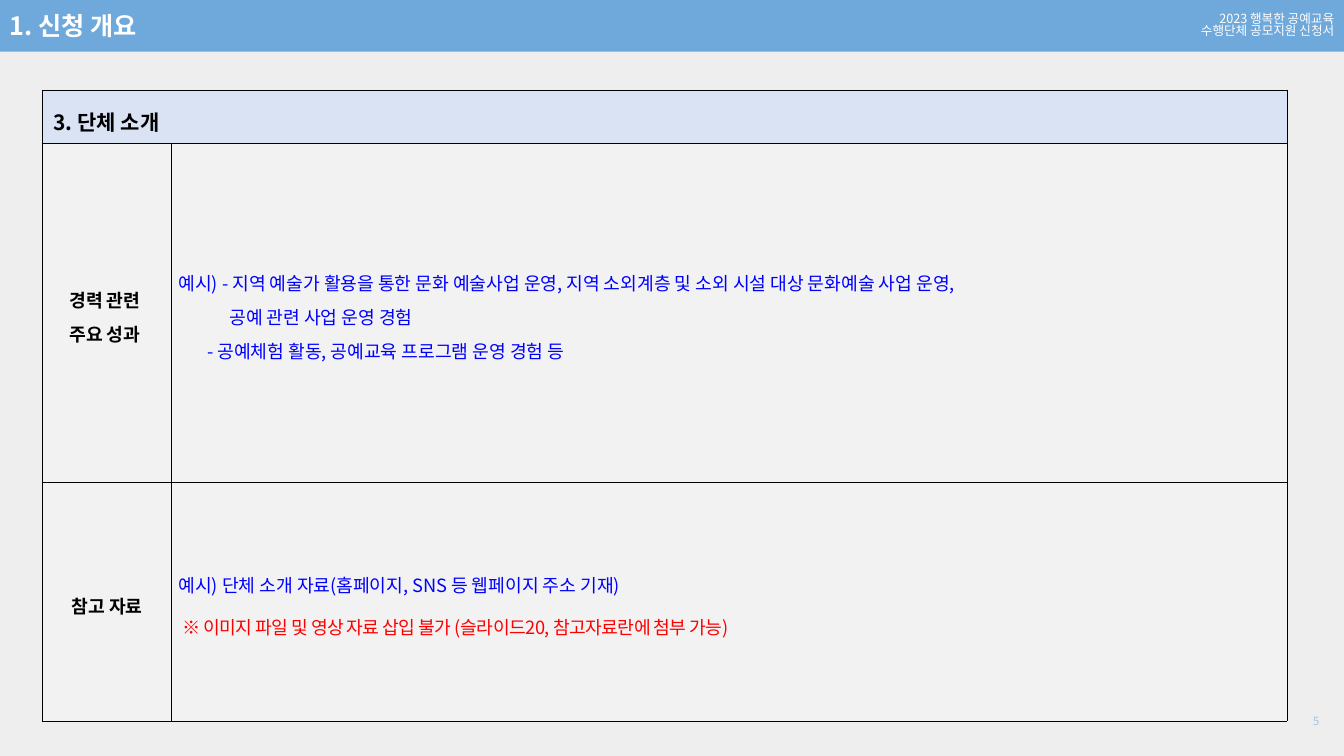
from lxml import etree
from pptx import Presentation
from pptx.dml.color import RGBColor
from pptx.enum.shapes import MSO_SHAPE as SHAPE
from pptx.enum.text import MSO_ANCHOR as ANCHOR, PP_ALIGN as ALIGN
from pptx.oxml.ns import qn
from pptx.util import Cm, Pt

FONT = "Noto Sans CJK KR"
COLORS = {
    "background": "EEEEEE", "bar": "6FA8DB", "heading": "DAE3F3",
    "cell": "F2F2F2", "black": "000000", "white": "FFFFFF",
    "example": "0000FF", "warning": "FF0000", "number": "9DC3E6",
}
COLUMN_WIDTHS = (3.25, 28.12)
ROW_HEIGHTS = (1.35, 8.53, 6.02)
LABEL = {"size": 13, "bold": True, "align": ALIGN.CENTER, "line_spacing": 1.3}
EXAMPLE = {"size": 13, "color": "example", "align": ALIGN.JUSTIFY,
           "line_spacing": 1.3, "hanging": 0.5, "indent": 0.5}
HEADING = {"size": 15, "bold": True, "align": ALIGN.JUSTIFY,
           "line_spacing": 1.3, "indent": 0.1}
WARNING = {**EXAMPLE, "color": "warning", "line_spacing": 1.6,
           "indent": 0.1, "hanging": 0, "tracking": -0.4}


def rgb(name):
    return RGBColor.from_string(COLORS[name])


def fill_solid(fill, color):
    fill.solid()
    fill.fore_color.rgb = rgb(color)


def add_run(p, text, size, color="black", bold=False, tracking=0):
    r = p.add_run()
    r.text = text
    for name, value in {"size": Pt(size), "bold": bold, "name": FONT}.items():
        setattr(r.font, name, value)
    r.font.color.rgb = rgb(color)
    rPr = r.font._element
    etree.SubElement(rPr, qn("a:ea")).set("typeface", FONT)
    if tracking:
        rPr.set("spc", str(round(tracking * 100)))


def write_lines(tf, lines):
    """Write (text, format) pairs as paragraphs; indents are in centimetres."""
    for i, (text, style) in enumerate(lines):
        style = dict(style)
        p = tf.paragraphs[0] if i == 0 else tf.add_paragraph()
        p.alignment = style.pop("align", ALIGN.LEFT)
        p.line_spacing = style.pop("line_spacing", 1.0)
        indent, hanging = style.pop("indent", 0), style.pop("hanging", 0)
        if indent:
            pPr = p._p.get_or_add_pPr()
            pPr.set("marL", str(Cm(indent)))
            pPr.set("indent", str(-Cm(hanging)))
        add_run(p, text, **style)


def add_text(s, left, top, width, height, text, style, wrap=True, anchor=ANCHOR.TOP):
    tf = s.shapes.add_textbox(Cm(left), Cm(top), Cm(width), Cm(height)).text_frame
    for name, value in {"word_wrap": wrap, "vertical_anchor": anchor}.items():
        setattr(tf, name, value)
    write_lines(tf, [(text, style)])


def add_header_bar(s, width, lines):
    sp = s.shapes.add_shape(SHAPE.RECTANGLE, 0, 0, width, Cm(1.3))
    sp.shadow.inherit = False
    fill_solid(sp.fill, "bar")
    sp.line.fill.background()
    sp.text_frame.vertical_anchor = ANCHOR.MIDDLE
    style = {"size": 9, "color": "white", "align": ALIGN.RIGHT, "line_spacing": 0.82}
    write_lines(sp.text_frame, [(line, style) for line in lines])


def add_borders(cell):
    tcPr = cell._tc.get_or_add_tcPr()
    for side in ("lnL", "lnR", "lnT", "lnB"):
        ln = etree.SubElement(tcPr, qn(f"a:{side}"), w=str(Pt(0.25)))
        solid = etree.SubElement(ln, qn("a:solidFill"))
        etree.SubElement(solid, qn("a:srgbClr"), val=COLORS["black"])


def fill_cell(cell, lines, color="cell"):
    layout = {"margin_left": Cm(0.18), "margin_right": Cm(0.18),
              "margin_top": Cm(0.05), "margin_bottom": Cm(0.05),
              "vertical_anchor": ANCHOR.MIDDLE}
    for name, value in layout.items():
        setattr(cell, name, value)
    fill_solid(cell.fill, color)
    write_lines(cell.text_frame, lines)


def add_intro_table(s, heading, rows):
    table = s.shapes.add_table(
        len(ROW_HEIGHTS), len(COLUMN_WIDTHS), Cm(1.07), Cm(2.26),
        Cm(sum(COLUMN_WIDTHS)), Cm(sum(ROW_HEIGHTS))).table
    table.first_row = table.horz_banding = False
    for column, width in zip(table.columns, COLUMN_WIDTHS):
        column.width = Cm(width)
    for row, height in zip(table.rows, ROW_HEIGHTS):
        row.height = Cm(height)
    for cell in table.iter_cells():
        add_borders(cell)
    table.cell(0, 0).merge(table.cell(0, 1))
    fill_cell(table.cell(0, 0), [(heading, HEADING)], "heading")
    for i, row in enumerate(rows, 1):
        for j, lines in enumerate(row):
            fill_cell(table.cell(i, j), lines)


def main():
    prs = Presentation()
    prs.slide_width, prs.slide_height = Cm(33.87), Cm(19.05)
    s = prs.slides.add_slide(prs.slide_layouts[6])
    fill_solid(s.background.fill, "background")

    add_header_bar(s, prs.slide_width, ["2023 행복한 공예교육", "수행단체 공모지원 신청서"])
    add_intro_table(s, "3. 단체 소개", [
        ([("경력 관련 ", LABEL), ("주요 성과 ", LABEL)],
         [("예시) - 지역 예술가 활용을 통한 문화 예술사업 운영, "
           "지역 소외계층 및 소외 시설 대상 문화예술 사업 운영,", EXAMPLE),
          ("공예 관련 사업 운영 경험", {**EXAMPLE, "indent": 1.28, "hanging": 0}),
          ("- 공예체험 활동, 공예교육 프로그램 운영 경험 등",
           {**EXAMPLE, "indent": 0.72, "hanging": 0})]),
        ([("참고 자료", LABEL)],
         [("예시) 단체 소개 자료(홈페이지, SNS 등 웹페이지 주소 기재)", EXAMPLE),
          ("※ 이미지 파일 및 영상 자료 삽입 불가 (슬라이드20, 참고자료란에 첨부 가능)",
           WARNING)]),
    ])
    add_text(s, 32.33, 17.65, 1.17, 1.02, "5",
             {"size": 8, "color": "number", "align": ALIGN.RIGHT}, anchor=ANCHOR.MIDDLE)
    add_text(s, 0, 0.13, 4.06, 1.02, "1. 신청 개요",
             {"size": 18, "color": "white", "bold": True}, wrap=False)
    prs.save("out.pptx")


if __name__ == "__main__":
    main()
